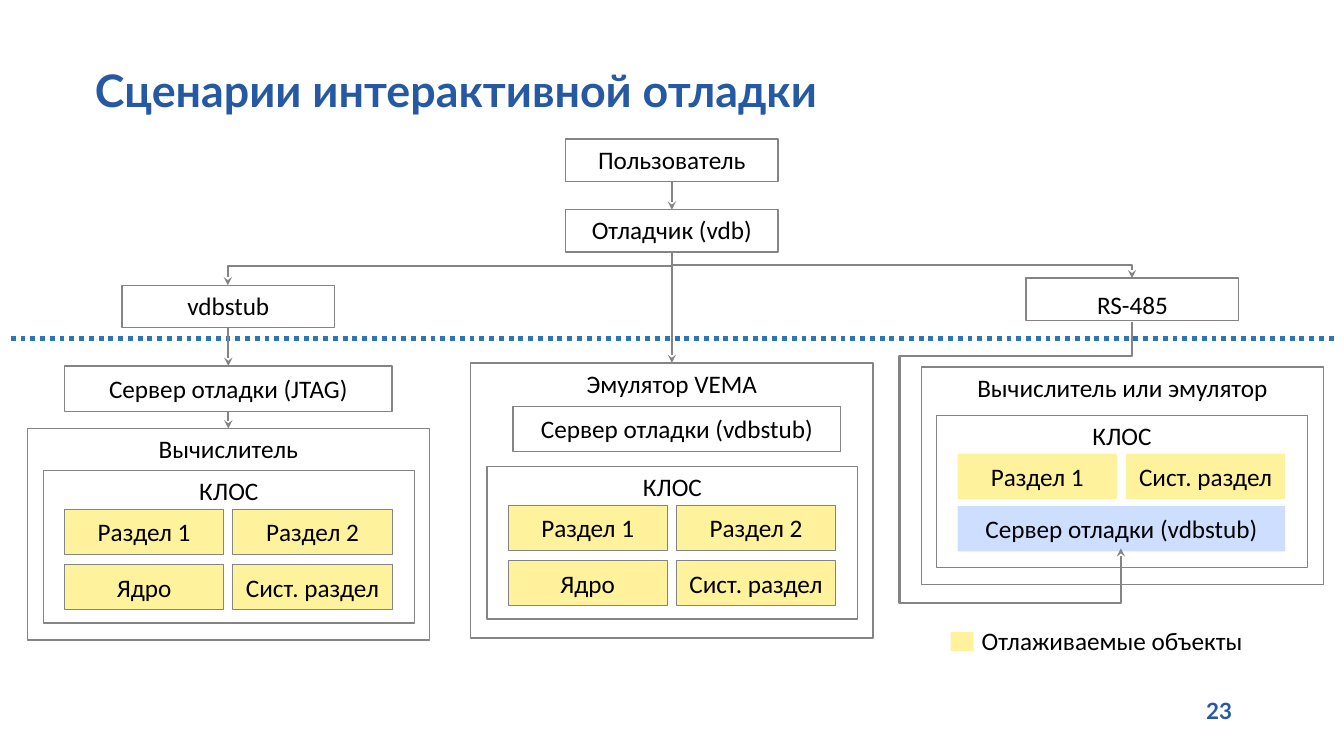
import dataclasses
from typing import Optional

import lxml.etree
import pptx
import pptx.dml.color
import pptx.enum.dml
import pptx.enum.shapes
import pptx.enum.text
import pptx.oxml.ns
import pptx.util

COLORS = {
    "ink": "000000", "heading": "2659A4", "line": "848484", "divider": "2E75B6",
    "white": "FFFFFF", "debugged": "FFF29C", "server": "CDDEFF",
}
CELL = pptx.util.Inches(0.1)  # one column or row of the layout grid
COLUMNS, ROWS = 133.33, 75
TEXT_INSET = 0.5

ALIGN = pptx.enum.text.PP_ALIGN
ANCHOR = pptx.enum.text.MSO_ANCHOR
LINK = pptx.enum.shapes.MSO_CONNECTOR
BOTTOM, TOP = 2, 0

NODE = (21.1, 4.2)
SERVER = (32.5, 4.5)
PART = (15.8, 4.5)
KERNEL = (36.8, 15.1)
PART_PITCH = (16.7, 5.5)
PART_OFFSET = (2.1, 3.8)


@dataclasses.dataclass
class Block:
    left: float
    top: float
    size: tuple[float, float]
    text: str = ""
    fill: Optional[str] = None
    outline: float = 1
    middle: bool = False
    lowered: float = 0


@dataclasses.dataclass
class Label:
    text: str
    frame: tuple[float, float, float, float]
    size: float
    font: str
    color: str
    bold: bool = False
    align: ALIGN = ALIGN.LEFT
    inset: float = 1
    spacing: float = 1
    wrap: bool = True


@dataclasses.dataclass
class Elbow:
    start: tuple[float, float]
    end: tuple[float, float]
    preset: str
    bends: tuple[float, ...]


def grid(cells: float) -> int:
    return round(cells * CELL)


def rgb(name: str) -> pptx.dml.color.RGBColor:
    return pptx.dml.color.RGBColor.from_string(COLORS[name])


def write(shape, text: str, size: float, font: str, color: str, align: ALIGN):
    para = shape.text_frame.paragraphs[0]
    para.text = text
    para.alignment = align
    para.font.size = pptx.util.Pt(size)
    para.font.name = font
    para.font.color.rgb = rgb(color)
    return para


def set_insets(frame, sides: float, top: float, bottom: float) -> None:
    frame.margin_left = frame.margin_right = grid(sides)
    frame.margin_top, frame.margin_bottom = grid(top), grid(bottom)


def draw_block(page, block: Block):
    box = page.shapes.add_shape(
        pptx.enum.shapes.MSO_SHAPE.RECTANGLE, grid(block.left), grid(block.top),
        *map(grid, block.size))
    box.shadow.inherit = False
    if block.fill:
        box.fill.solid()
        box.fill.fore_color.rgb = rgb(block.fill)
    else:
        box.fill.background()
    if block.outline:
        box.line.color.rgb = rgb("line")
        box.line.width = pptx.util.Pt(block.outline)
    else:
        box.line.fill.background()
    if block.text:
        frame = box.text_frame
        frame.word_wrap = True
        frame.vertical_anchor = ANCHOR.MIDDLE if block.middle else ANCHOR.TOP
        vertical = 0 if block.middle else TEXT_INSET
        set_insets(frame, TEXT_INSET, vertical + block.lowered, 0)
        write(box, block.text, 18, "Calibri", "ink", ALIGN.CENTER)
    return box


def draw_label(page, label: Label) -> None:
    box = page.shapes.add_textbox(*map(grid, label.frame))
    frame = box.text_frame
    frame.word_wrap = label.wrap
    frame.vertical_anchor = ANCHOR.MIDDLE
    set_insets(frame, label.inset, 0.5, 0.5)
    para = write(box, label.text, label.size, label.font, label.color, label.align)
    para.font.bold = label.bold
    para.line_spacing = label.spacing


def draw_link(page, kind: LINK, frame: tuple, color: str = "line",
              width: float = 1.5, arrow: bool = True):
    link = page.shapes.add_connector(kind, *map(grid, frame))
    link.line.color.rgb = rgb(color)
    link.line.width = pptx.util.Pt(width)
    if arrow:
        lxml.etree.SubElement(link.line._get_or_add_ln(),
                              pptx.oxml.ns.qn("a:tailEnd"), type="stealth")
    lxml.etree.SubElement(link._element.spPr, pptx.oxml.ns.qn("a:effectLst"))
    return link


def join(page, upper, lower) -> None:
    link = draw_link(page, LINK.STRAIGHT, (0, 0, 1, 1))
    link.begin_connect(upper, BOTTOM)
    link.end_connect(lower, TOP)


def draw_elbow(page, elbow: Elbow) -> None:
    """Draw a bent arrow that leaves its start downwards."""
    (x1, y1), (x2, y2) = elbow.start, elbow.end
    middle_x, middle_y = (x1 + x2) / 2, (y1 + y2) / 2
    half_w, half_h = abs(y2 - y1) / 2, abs(x2 - x1) / 2
    link = draw_link(page, LINK.ELBOW, (middle_x - half_w, middle_y - half_h,
                                        middle_x + half_w, middle_y + half_h))
    properties = link._element.spPr
    xfrm = properties.find(pptx.oxml.ns.qn("a:xfrm"))
    rightward = x2 > x1
    xfrm.set("rot", str((270 if rightward else 90) * 60000))
    if rightward:
        xfrm.set("flipH", "1")
    geometry = properties.find(pptx.oxml.ns.qn("a:prstGeom"))
    geometry.set("prst", elbow.preset)
    guides = geometry.find(pptx.oxml.ns.qn("a:avLst"))
    for number, bend in enumerate(elbow.bends, start=1):
        lxml.etree.SubElement(guides, pptx.oxml.ns.qn("a:gd"), name=f"adj{number}",
                              fmla=f"val {round(bend * 100000)}")


def draw_kernel(page, left: float, top: float, parts: list[str], outline: float) -> None:
    draw_block(page, Block(left, top, KERNEL, "КЛОС"))
    for index, part in enumerate(parts):
        row, column = divmod(index, 2)
        draw_block(page, Block(left + PART_OFFSET[0] + column * PART_PITCH[0],
                               top + PART_OFFSET[1] + row * PART_PITCH[1],
                               PART, part, "debugged", outline, True))


def main() -> None:
    deck = pptx.Presentation()
    deck.slide_width, deck.slide_height = grid(COLUMNS), grid(ROWS)
    page = deck.slides.add_slide(deck.slide_layouts[6])

    # Computers and emulators
    computer = draw_block(page, Block(2.7, 42.5, (39.9, 21), "Вычислитель"))
    emulator = draw_block(page, Block(46.7, 36, (39.9, 27.3), "Эмулятор VEMA"))
    draw_block(page, Block(91.4, 36.4, (39.9, 21.6), "Вычислитель или эмулятор"))

    # Kernels with the parts being debugged
    parts = ["Раздел 1", "Раздел 2", "Ядро", "Сист. раздел"]
    draw_kernel(page, 4.3, 46.7, parts, 0.5)
    draw_kernel(page, 48.3, 46.3, parts, 0.5)
    draw_kernel(page, 92.9, 41.2, [parts[0], parts[3]], 0)

    # Debug servers
    jtag = draw_block(page, Block(6.4, 36.3, SERVER, "Сервер отладки (JTAG)", "white", 1, True))
    stub_text = "Сервер отладки (vdbstub)"
    draw_block(page, Block(50.9, 40.3, SERVER, stub_text, "white", 1, True))
    draw_block(page, Block(95, 50.2, SERVER, stub_text, "server", 0, True))

    # User side
    user = draw_block(page, Block(56.1, 13.8, NODE, "Пользователь"))
    debugger = draw_block(page, Block(56.1, 20.8, NODE, "Отладчик (vdb)"))
    stub = draw_block(page, Block(12.1, 28.3, NODE, "vdbstub"))
    draw_block(page, Block(101.8, 27.6, NODE, "RS-485", lowered=0.6))

    # Divider and arrows
    divider = draw_link(page, LINK.STRAIGHT, (132.3, 33.6, 1, 33.6), "divider", 3.5, False)
    divider.line.dash_style = pptx.enum.dml.MSO_LINE.ROUND_DOT
    for upper, lower in [(user, debugger), (debugger, emulator), (stub, jtag), (jtag, computer)]:
        join(page, upper, lower)
    for elbow in [
        Elbow((66.7, 25), (112.3, 27.6), "bentConnector3", (0.5,)),
        Elbow((66.7, 25), (22.6, 28.3), "bentConnector3", (0.41,)),
        Elbow((112.3, 31.9), (111.2, 54.4), "bentConnector5", (0.15, 21, 1.24)),
    ]:
        draw_elbow(page, elbow)

    # Title, legend and page number
    draw_label(page, Label("Сценарии интерактивной отладки", (8.9, 2, 98.8, 14.5), 32, "Lato",
                           "heading", True, inset=TEXT_INSET, spacing=0.9))
    draw_block(page, Block(94.3, 62.7, (2.3, 1.9), fill="debugged", outline=0))
    draw_label(page, Label("Отлаживаемые объекты", (96.4, 61.5, 28.2, 4), 18, "Calibri",
                           "ink", wrap=False))
    draw_label(page, Label("23", (110.7, 68.6, 12.5, 3.7), 16, "Lato", "heading", True, ALIGN.RIGHT))

    deck.save("out.pptx")


if __name__ == "__main__":
    main()
